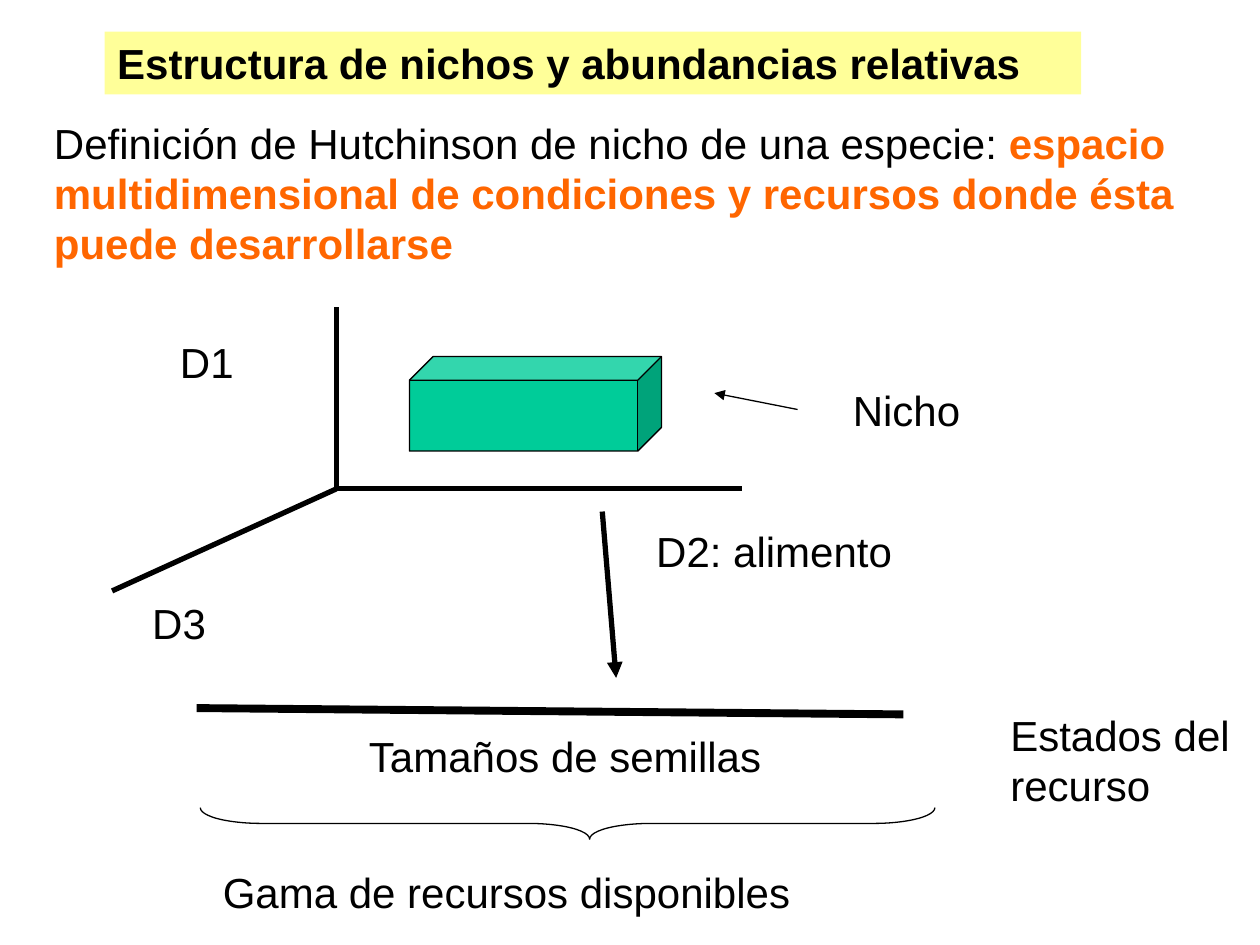
from lxml import etree
from pptx import Presentation
from pptx.dml.color import RGBColor
from pptx.enum.shapes import MSO_CONNECTOR, MSO_SHAPE
from pptx.enum.text import MSO_ANCHOR, MSO_AUTO_SIZE, PP_ALIGN
from pptx.oxml.ns import qn
from pptx.util import Inches, Pt

COLORS = {"ink": "000000", "banner": "FFFF99", "accent": "FF6600", "niche": "00CC99"}


def rgb(name):
    return RGBColor.from_string(COLORS[name])


class SlideBuilder:
    """Holds the text style and the current slide."""

    font = {"name": "Arial", "size": Pt(24), "bold": False}
    frame = {"word_wrap": True, "auto_size": MSO_AUTO_SIZE.NONE,
             "vertical_anchor": MSO_ANCHOR.TOP}

    def __init__(self, slide):
        self.slide = slide

    def fill_text(self, tf, runs):
        for key, value in self.frame.items():
            setattr(tf, key, value)
        p = tf.paragraphs[0]
        p.alignment = PP_ALIGN.LEFT
        for text, color, bold in runs:
            r = p.add_run()
            r.text = text
            for key, value in {**self.font, "bold": bold}.items():
                setattr(r.font, key, value)
            r.font.color.rgb = rgb(color)

    def title(self, text, *box):
        sp = self.slide.shapes.title
        sp.left, sp.top, sp.width, sp.height = map(Inches, box)
        sp.fill.solid()
        sp.fill.fore_color.rgb = rgb("banner")
        self.fill_text(sp.text_frame, [(text, "ink", True)])

    def text(self, runs, *box):
        sp = self.slide.shapes.add_textbox(*map(Inches, box))
        if isinstance(runs, str):
            runs = [(runs, "ink", False)]
        self.fill_text(sp.text_frame, runs)

    def line(self, start, end, width=3, arrow=False):
        cx = self.slide.shapes.add_connector(
            MSO_CONNECTOR.STRAIGHT, *map(Inches, (*start, *end)))
        cx.line.color.rgb = rgb("ink")
        cx.line.width = Pt(width)
        props = cx.element.spPr
        if arrow:
            etree.SubElement(props.find(qn("a:ln")), qn("a:tailEnd"), type="triangle")
        etree.SubElement(props, qn("a:effectLst"))

    def shape(self, kind, box, adjustments, fill=None, rotation=0):
        sp = self.slide.shapes.add_shape(kind, *map(Inches, box))
        sp.shadow.inherit = False
        sp.rotation = rotation
        for i, value in enumerate(adjustments):
            sp.adjustments[i] = value
        if fill:
            sp.fill.solid()
            sp.fill.fore_color.rgb = rgb(fill)
        else:
            sp.fill.background()
        sp.line.color.rgb = rgb("ink")
        sp.line.width = Pt(0.75)


def main():
    prs = Presentation()
    prs.slide_width, prs.slide_height = Inches(10), Inches(7.5)
    s = SlideBuilder(prs.slides.add_slide(prs.slide_layouts[5]))

    # Title and definition
    s.title("Estructura de nichos y abundancias relativas", 0.83, 0.25, 7.75, 0.5)
    s.text([("Definición de Hutchinson de nicho de una especie: ", "ink", False),
            ("espacio multidimensional de condiciones y recursos donde ésta "
             "puede desarrollarse", "accent", True)], 0.33, 0.88, 9.67, 1.3)

    # Three axes from a shared corner
    corner = (2.67, 3.88)
    for end in ((2.67, 2.44), (5.89, 3.88), (0.89, 4.69)):
        s.line(corner, end)

    # Niche, its pointer and the link to the resource axis
    s.shape(MSO_SHAPE.CUBE, (3.25, 2.83, 2, 0.75), [0.25], fill="niche")
    s.line((6.33, 3.25), (5.67, 3.12), width=0.75, arrow=True)
    s.line((4.78, 4.06), (4.89, 5.38), arrow=True)

    # Resource axis and its range
    s.line((1.56, 5.62), (7.17, 5.67), width=4.5)
    s.shape(MSO_SHAPE.LEFT_BRACE, (4.38, 3.62, 0.25, 5.83), [1.94, 0.53], rotation=270)

    # Labels
    for text, *box in (
        ("D1", 1.33, 2.62, 1, 0.5),
        ("D2: alimento", 5.11, 4.12, 2.89, 0.5),
        ("D3", 1.11, 4.69, 1.22, 0.5),
        ("Nicho", 6.67, 3, 1.44, 0.5),
        ("Tamaños de semillas", 2.83, 5.75, 3.86, 0.5),
        ("Gama de recursos disponibles", 1.67, 6.83, 6.75, 0.5),
        ("Estados del recurso", 7.92, 5.58, 2.08, 0.9),
    ):
        s.text(text, *box)

    prs.save("out.pptx")


if __name__ == "__main__":
    main()
